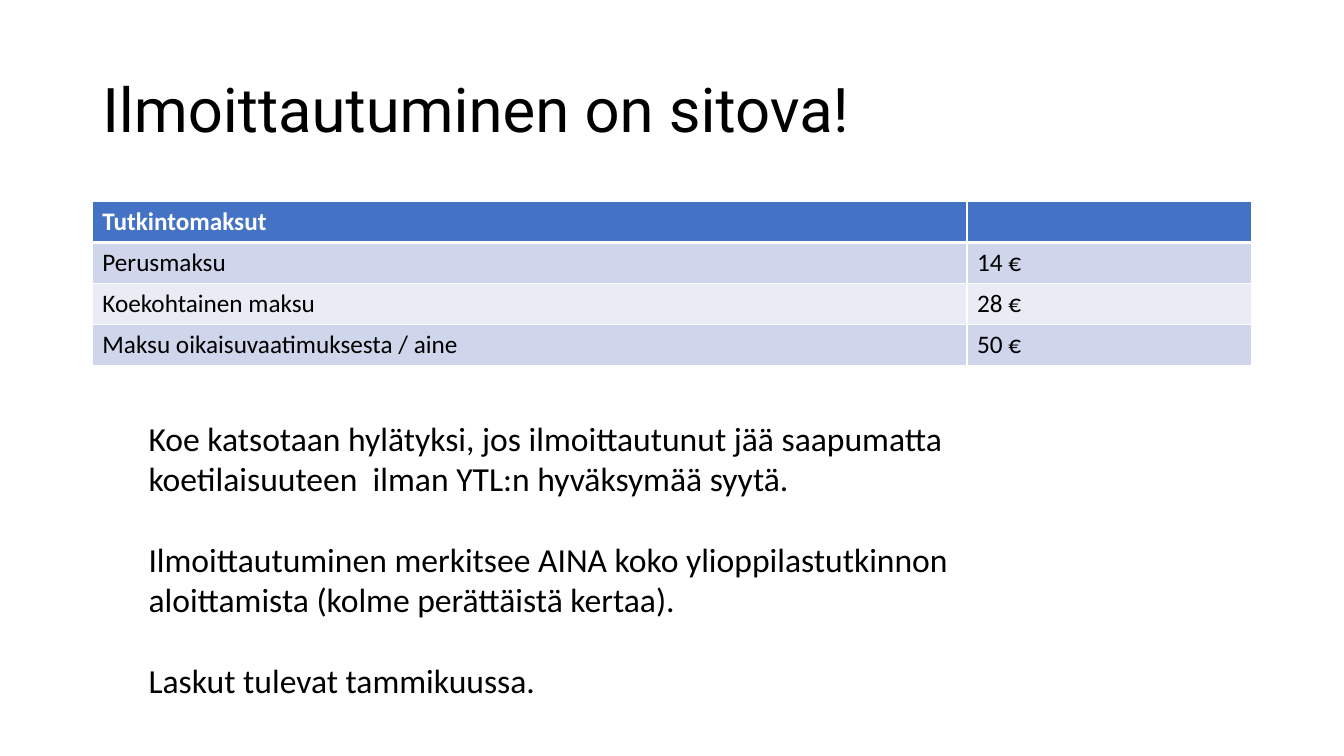
"""Builds the slide on exam registration and its fees."""
import lxml.etree
import pptx
import pptx.dml.color
import pptx.enum.text
import pptx.oxml.ns
import pptx.util

PX = 9525
BLACK = pptx.dml.color.RGBColor(0x00, 0x00, 0x00)
WHITE = pptx.dml.color.RGBColor(0xFF, 0xFF, 0xFF)
HEADER_BLUE = pptx.dml.color.RGBColor(0x44, 0x72, 0xC4)
BAND_DARK = pptx.dml.color.RGBColor(0xCF, 0xD5, 0xEA)
BAND_LIGHT = pptx.dml.color.RGBColor(0xE9, 0xEB, 0xF5)

FEES = [
    ("Tutkintomaksut", ""),
    ("Perusmaksu", "14 €"),
    ("Koekohtainen maksu", "28 €"),
    ("Maksu oikaisuvaatimuksesta / aine", "50 €"),
]
NOTES = [
    "Koe katsotaan hylätyksi, jos ilmoittautunut jää saapumatta "
    "koetilaisuuteen  ilman YTL:n hyväksymää syytä.",
    "Ilmoittautuminen merkitsee AINA koko ylioppilastutkinnon "
    "aloittamista (kolme perättäistä kertaa).",
    "Laskut tulevat tammikuussa.",
]


def px(*lengths):
    """Turn px lengths into EMU."""
    return [length * PX for length in lengths]


def set_font(p, name, size, color, bold=False):
    """Set the font of a whole paragraph."""
    p.font.name = name
    p.font.size = pptx.util.Pt(size)
    p.font.color.rgb = color
    p.font.bold = bold


def set_borders(cell, top, bottom):
    """Give a cell white borders, with top and bottom widths in points."""
    tcPr = cell._tc.get_or_add_tcPr()
    sides = [("lnL", 1), ("lnR", 1), ("lnT", top), ("lnB", bottom)]
    for i, (side, width) in enumerate(sides):
        ln = lxml.etree.Element(pptx.oxml.ns.qn(f"a:{side}"), w=str(pptx.util.Pt(width)))
        fill = lxml.etree.SubElement(ln, pptx.oxml.ns.qn("a:solidFill"))
        lxml.etree.SubElement(fill, pptx.oxml.ns.qn("a:srgbClr"), val=str(WHITE))
        tcPr.insert(i, ln)


def add_title(s, x, y, w, h):
    """Place the slide title, centred vertically in its box."""
    tf = s.shapes.add_textbox(*px(x, y, w, h)).text_frame
    tf.word_wrap = True
    tf.vertical_anchor = pptx.enum.text.MSO_ANCHOR.MIDDLE
    p = tf.paragraphs[0]
    p.text = "Ilmoittautuminen on sitova!"
    p.line_spacing = 0.9
    set_font(p, "Roboto", 44, BLACK)


def add_fee_table(s, x, y, w, h, price_w):
    """Place the fee table, with a price column on the right."""
    shape = s.shapes.add_table(len(FEES), 2, *px(x, y, w, h))
    table = shape.table
    table.columns[0].width, table.columns[1].width = px(w - price_w, price_w)
    for row, texts in enumerate(FEES):
        header = row == 0
        band = BAND_DARK if row % 2 else BAND_LIGHT
        for col, text in enumerate(texts):
            cell = table.cell(row, col)
            cell.text = text
            cell.vertical_anchor = pptx.enum.text.MSO_ANCHOR.MIDDLE
            cell.fill.solid()
            cell.fill.fore_color.rgb = HEADER_BLUE if header else band
            set_borders(cell, 3 if row == 1 else 1, 3 if header else 1)
            set_font(cell.text_frame.paragraphs[0], "Calibri", 18,
                     WHITE if header else BLACK, header)


def add_notes(s, x, y, w, h):
    """Place the paragraphs about registration, one line apart."""
    tf = s.shapes.add_textbox(*px(x, y, w, h)).text_frame
    tf.word_wrap = True
    for i, text in enumerate(NOTES):
        p = tf.add_paragraph() if i else tf.paragraphs[0]
        p.text = text
        p.space_before = pptx.util.Pt(29 if i else 0)
        set_font(p, "Calibri", 24, BLACK)


def main():
    """Build and save the presentation."""
    prs = pptx.Presentation()
    prs.slide_width, prs.slide_height = px(1280, 720)
    s = prs.slides.add_slide(prs.slide_layouts[6])
    add_title(s, 88, 38, 1104, 139)
    add_fee_table(s, 88, 192, 1104, 156, 271)
    add_notes(s, 132, 393, 900, 310)
    prs.save("out.pptx")


if __name__ == "__main__":
    main()
